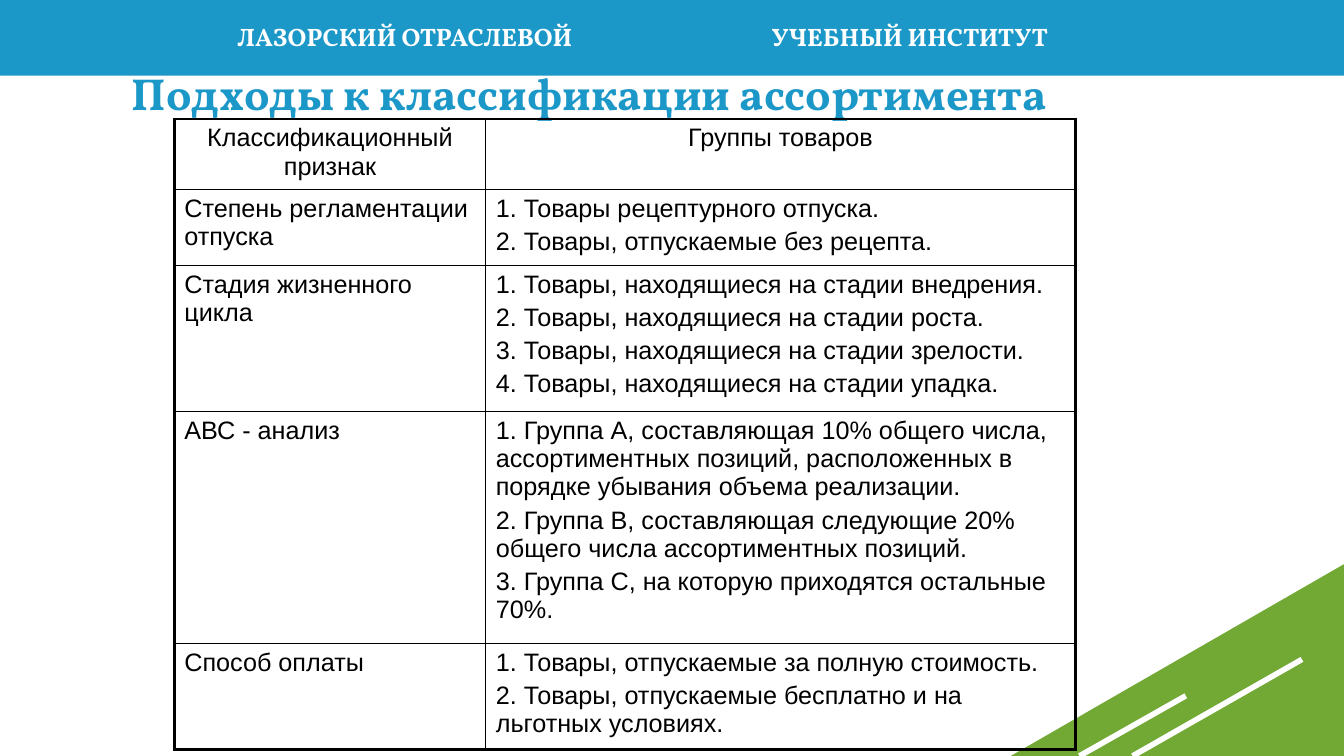
"""Build a slide with a table of approaches to classifying a product range."""
import pptx
import pptx.util
import pptx.dml.color
import pptx.enum.shapes
import pptx.enum.text
import pptx.oxml
import pptx.oxml.ns

Pt = pptx.util.Pt
ALIGN = pptx.enum.text.PP_ALIGN
SHAPE = pptx.enum.shapes.MSO_SHAPE
SPACE = pptx.oxml.ns.nsdecls("a")
COLORS = {"blue": "1B97C8", "green": "71A934", "white": "FFFFFF", "black": "000000"}
WIDTHS = [222.5, 421]
HEIGHTS = [49, 53, 104, 162, 74]
ROWS = [
    ("Классификационный признак", ["Группы товаров"]),
    ("Степень регламентации отпуска", [
        "1. Товары рецептурного отпуска.",
        "2. Товары, отпускаемые без рецепта."]),
    ("Стадия жизненного цикла", [
        "1. Товары, находящиеся на стадии внедрения.",
        "2. Товары, находящиеся на стадии роста.",
        "3. Товары, находящиеся на стадии зрелости.",
        "4. Товары, находящиеся на стадии упадка."]),
    ("АВС - анализ", [
        "1. Группа А, составляющая 10% общего числа, ассортиментных позиций, "
        "расположенных в порядке убывания объема реализации.",
        "2. Группа В, составляющая следующие 20% общего числа ассортиментных позиций.",
        "3. Группа С, на которую приходятся остальные 70%."]),
    ("Способ оплаты", [
        "1. Товары, отпускаемые за полную стоимость.",
        "2. Товары, отпускаемые бесплатно и на льготных условиях."]),
]


def color(name):
    return pptx.dml.color.RGBColor.from_string(COLORS[name])


def style(para, face, size, tint, bold=False, align=ALIGN.LEFT):
    para.alignment = align
    for run in para.runs:
        font = run.font
        font.name, font.size, font.bold = face, Pt(size), bold
        font.color.rgb = color(tint)


def add_block(slide, kind, box, tint):
    block = slide.shapes.add_shape(kind, *map(Pt, box))
    block.shadow.inherit = False
    block.fill.solid()
    block.fill.fore_color.rgb = color(tint)
    block.line.fill.background()
    return block


def add_stripe(slide, ends):
    kind = pptx.enum.shapes.MSO_CONNECTOR.STRAIGHT
    stripe = slide.shapes.add_connector(kind, *map(Pt, ends))
    stripe.line.color.rgb = color("white")
    stripe.line.width = Pt(4)
    stripe._element.spPr.append(pptx.oxml.parse_xml(f"<a:effectLst {SPACE}/>"))


def add_label(slide, left, text, align):
    frame = slide.shapes.add_textbox(Pt(left), Pt(12), Pt(350), Pt(29)).text_frame
    frame.word_wrap = True
    frame.text = text
    style(frame.paragraphs[0], "Vollkorn", 18, "white", True, align)


def set_title(slide, text):
    title = slide.shapes.title
    title.left, title.top, title.width, title.height = map(Pt, (87, 46, 763, 45))
    frame = title.text_frame
    frame.text = text
    frame.auto_size = pptx.enum.text.MSO_AUTO_SIZE.NONE
    frame.vertical_anchor = pptx.enum.text.MSO_ANCHOR.MIDDLE
    para = frame.paragraphs[0]
    para.line_spacing = 0.9
    style(para, "Vollkorn", 32, "blue", True)


def set_edges(cell, outer):
    for side in "LRTB":
        width = Pt(2.25 if side in outer else 1)
        cell._tc.get_or_add_tcPr().append(pptx.oxml.parse_xml(
            f'<a:ln{side} {SPACE} w="{width}"><a:solidFill>'
            f'<a:srgbClr val="{COLORS["black"]}"/></a:solidFill></a:ln{side}>'))
    cell.fill.background()


def fill_cell(cell, lines, align):
    cell.text_frame.text = "\n".join(lines)
    for para in cell.text_frame.paragraphs:
        para._p.get_or_add_pPr().append(pptx.oxml.parse_xml(
            f'<a:spcBef {SPACE}><a:spcPct val="20000"/></a:spcBef>'))
        style(para, "Arial", 18, "black", align=align)


def add_grid(slide):
    frame = slide.shapes.add_table(len(ROWS), len(WIDTHS), Pt(124.5), Pt(85),
                                   Pt(sum(WIDTHS)), Pt(sum(HEIGHTS)))
    table = frame.table
    table.first_row = table.horz_banding = False
    for col, width in zip(table.columns, WIDTHS):
        col.width = Pt(width)
    for row, height in zip(table.rows, HEIGHTS):
        row.height = Pt(height)
    ends = {0: "T", len(ROWS) - 1: "B"}
    for r, (sign, groups) in enumerate(ROWS):
        for c, lines in enumerate(([sign], groups)):
            cell = table.cell(r, c)
            fill_cell(cell, lines, ALIGN.LEFT if r else ALIGN.CENTER)
            set_edges(cell, "LR"[c] + ends.get(r, ""))


def main():
    deck = pptx.Presentation()
    deck.slide_width, deck.slide_height = Pt(960), Pt(540)
    slide = deck.slides.add_slide(deck.slide_layouts[5])
    add_block(slide, SHAPE.RECTANGLE, (0, 0, 960, 54), "blue")
    corner = add_block(slide, SHAPE.RIGHT_TRIANGLE, (722, 403, 238, 137), "green")
    corner._element.spPr.xfrm.set("flipH", "1")
    for ends in ((771, 540, 847, 497), (809, 540, 930, 471)):
        add_stripe(slide, ends)
    add_label(slide, 66, "ЛАЗОРСКИЙ ОТРАСЛЕВОЙ", ALIGN.RIGHT)
    add_label(slide, 544, "УЧЕБНЫЙ ИНСТИТУТ", ALIGN.LEFT)
    set_title(slide, "Подходы к классификации ассортимента")
    add_grid(slide)
    deck.save("out.pptx")


if __name__ == "__main__":
    main()
